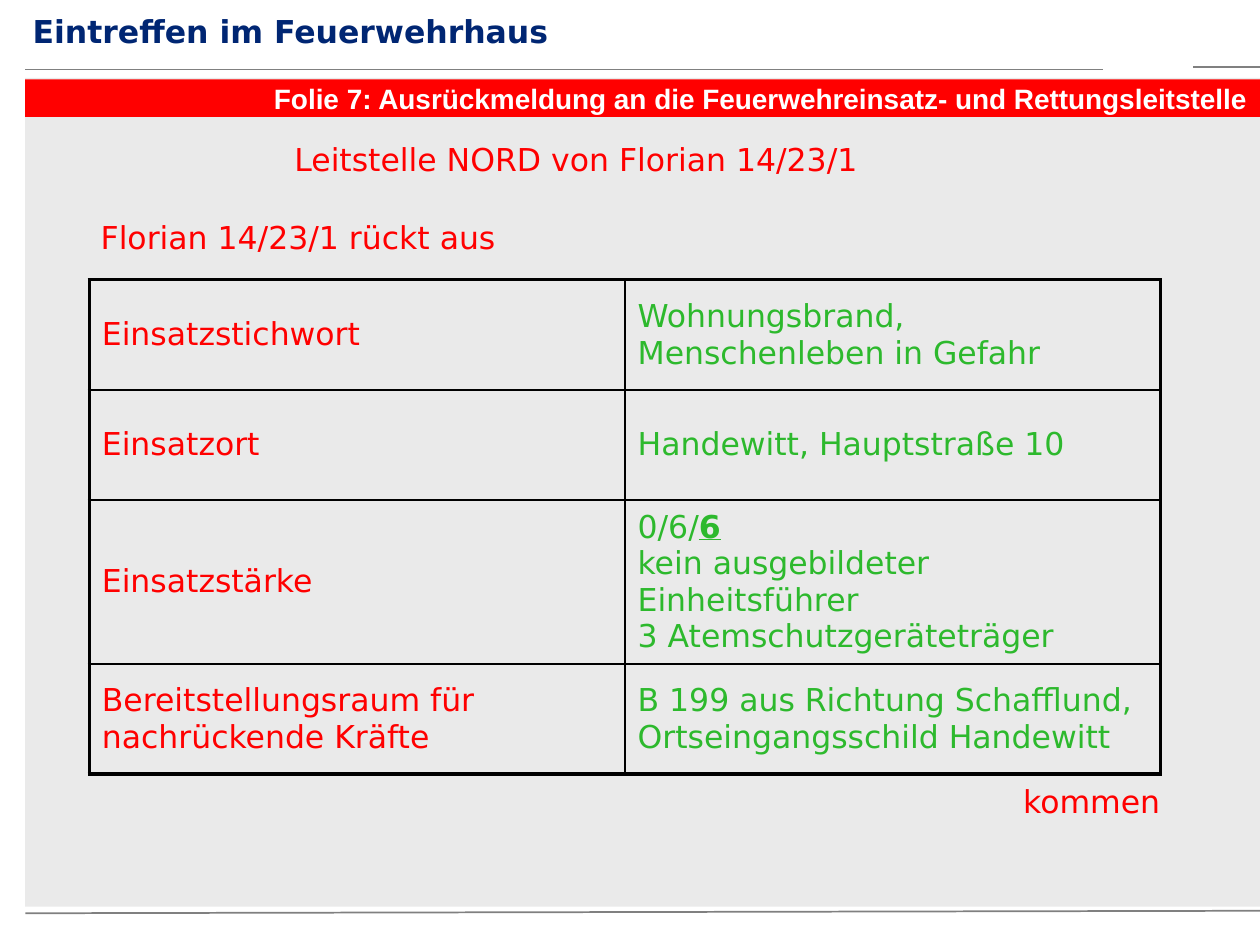
from dataclasses import dataclass
from typing import NamedTuple

from lxml import etree
from pptx import Presentation
from pptx.dml.color import RGBColor
from pptx.enum import shapes, text
from pptx.oxml import ns
from pptx.util import Cm, Pt


@dataclass(frozen=True)
class Theme:
    heading: str = "002673"
    alert: str = "FF0000"
    answer: str = "2DB92D"
    panel: str = "EAEAEA"
    rule: str = "808080"
    border: str = "000000"
    white: str = "FFFFFF"
    body_font: str = "DejaVu Sans"
    band_font: str = "Arial"
    body_size: int = 18
    band_size: int = 16
    thin: float = 1
    thick: float = 2.25


class Box(NamedTuple):
    left: float
    top: float
    width: float
    height: float

    def lengths(self):
        return [Cm(value) for value in self]

    def inner(self, left, top, width, height):
        return Box(self.left + left, self.top + top, width, height)


THEME = Theme()
REPORT = [
    ("Einsatzstichwort", "Wohnungsbrand,\nMenschenleben in Gefahr"),
    ("Einsatzort", "Handewitt, Hauptstraße 10"),
    ("Einsatzstärke", "0/6/\nkein ausgebildeter Einheitsführer\n3 Atemschutzgeräteträger"),
    ("Bereitstellungsraum für nachrückende Kräfte",
     "B 199 aus Richtung Schafflund, Ortseingangsschild Handewitt"),
]
ROW_HEIGHTS = [2.22, 2.22, 3.2, 2.22]


def style(frame, color, font=THEME.body_font, size=THEME.body_size, bold=False, align=None):
    for paragraph in frame.paragraphs:
        paragraph.alignment = align
        for run in paragraph.runs:
            run.font.name = font
            run.font.size = Pt(size)
            run.font.bold = bold
            run.font.color.rgb = RGBColor.from_string(color)


def add_block(slide, box, color):
    block = slide.shapes.add_shape(shapes.MSO_SHAPE.RECTANGLE, *box.lengths())
    block.shadow.inherit = False
    block.fill.solid()
    block.fill.fore_color.rgb = RGBColor.from_string(color)
    block.line.fill.background()
    return block


def add_rule(slide, *ends):
    rule = slide.shapes.add_connector(
        shapes.MSO_CONNECTOR.STRAIGHT, *[Cm(end) for end in ends])
    rule.line.color.rgb = RGBColor.from_string(THEME.rule)
    rule.line.width = Pt(THEME.thin)
    etree.SubElement(rule._element.spPr, ns.qn("a:effectLst"))


def add_background(slide, box):
    right = box.left + box.width
    bottom = box.top + box.height
    add_block(slide, box, THEME.panel)
    add_rule(slide, box.left, box.top - 0.17, 22.23, box.top - 0.17)
    add_rule(slide, 24.05, box.top - 0.22, right, box.top - 0.22)
    add_rule(slide, box.left, bottom + 0.13, right, bottom + 0.08)


def place_title(slide, box, wording):
    title = slide.shapes.title
    title.left, title.top, title.width, title.height = box.lengths()
    frame = title.text_frame
    frame.text = wording
    frame.margin_left = frame.margin_right = frame.margin_top = frame.margin_bottom = 0
    frame.vertical_anchor = text.MSO_ANCHOR.TOP
    frame.auto_size = text.MSO_AUTO_SIZE.NONE
    style(frame, THEME.heading, bold=True, align=text.PP_ALIGN.LEFT)


def add_band(slide, box, wording):
    frame = add_block(slide, box, THEME.alert).text_frame
    frame.text = wording
    frame.word_wrap = True
    frame.vertical_anchor = text.MSO_ANCHOR.MIDDLE
    style(frame, THEME.white, THEME.band_font, THEME.band_size, True, text.PP_ALIGN.RIGHT)


def add_phrase(slide, box, wording, align):
    frame = slide.shapes.add_textbox(*box.lengths()).text_frame
    frame.text = wording
    frame.word_wrap = True
    style(frame, THEME.alert, align=align)


def set_borders(cell, widths):
    properties = cell._tc.get_or_add_tcPr()
    for position, (side, width) in enumerate(widths.items()):
        line = etree.Element(ns.qn(f"a:{side}"), w=str(Pt(width)))
        fill = etree.SubElement(line, ns.qn("a:solidFill"))
        etree.SubElement(fill, ns.qn("a:srgbClr"), val=THEME.border)
        properties.insert(position, line)


def add_report(slide, box):
    table = slide.shapes.add_table(len(REPORT), 2, *box.lengths()).table
    table.first_row = table.horz_banding = False
    for column in table.columns:
        column.width = Cm(box.width / 2)
    last = len(REPORT) - 1
    for row, entry in enumerate(REPORT):
        table.rows[row].height = Cm(ROW_HEIGHTS[row])
        for column, wording in enumerate(entry):
            cell = table.cell(row, column)
            cell.fill.background()
            cell.vertical_anchor = text.MSO_ANCHOR.MIDDLE
            cell.text_frame.text = wording
            style(cell.text_frame, THEME.answer if column else THEME.alert)
            outer = {"lnL": column == 0, "lnR": column == 1,
                     "lnT": row == 0, "lnB": row == last}
            set_borders(cell, {side: THEME.thick if edge else THEME.thin
                               for side, edge in outer.items()})
    strength = table.cell(2, 1).text_frame
    total = strength.paragraphs[0].add_run()
    total.text = "6"
    style(strength, THEME.answer)
    total.font.bold = total.font.underline = True


def add_radio_message(slide, box):
    add_phrase(slide, box.inner(2.57, 0, 14.53, 1.02),
               "Leitstelle NORD von Florian 14/23/1", text.PP_ALIGN.CENTER)
    add_phrase(slide, box.inner(0, 1.58, 9.25, 1.02),
               "Florian 14/23/1 rückt aus", text.PP_ALIGN.LEFT)
    add_report(slide, box.inner(0.02, 2.95, 21.6, sum(ROW_HEIGHTS)))
    add_phrase(slide, box.inner(15.26, 12.95, 6.6, 1.02), "kommen", text.PP_ALIGN.RIGHT)


def main():
    deck = Presentation()
    deck.slide_width, deck.slide_height = Cm(25.4), Cm(19.05)
    slide = deck.slides.add_slide(deck.slide_layouts[5])
    panel = Box(0.51, 1.57, 24.89, 16.71)
    add_background(slide, panel)
    place_title(slide, Box(0.66, 0.25, 20.96, 1.04), "Eintreffen im Feuerwehrhaus")
    add_radio_message(slide, panel.inner(1.27, 1.12, 21.86, 13.97))
    add_band(slide, panel.inner(0, 0.03, panel.width, 0.76),
             "Folie 7: Ausrückmeldung an die Feuerwehreinsatz- und Rettungsleitstelle")
    deck.save("out.pptx")


if __name__ == "__main__":
    main()
